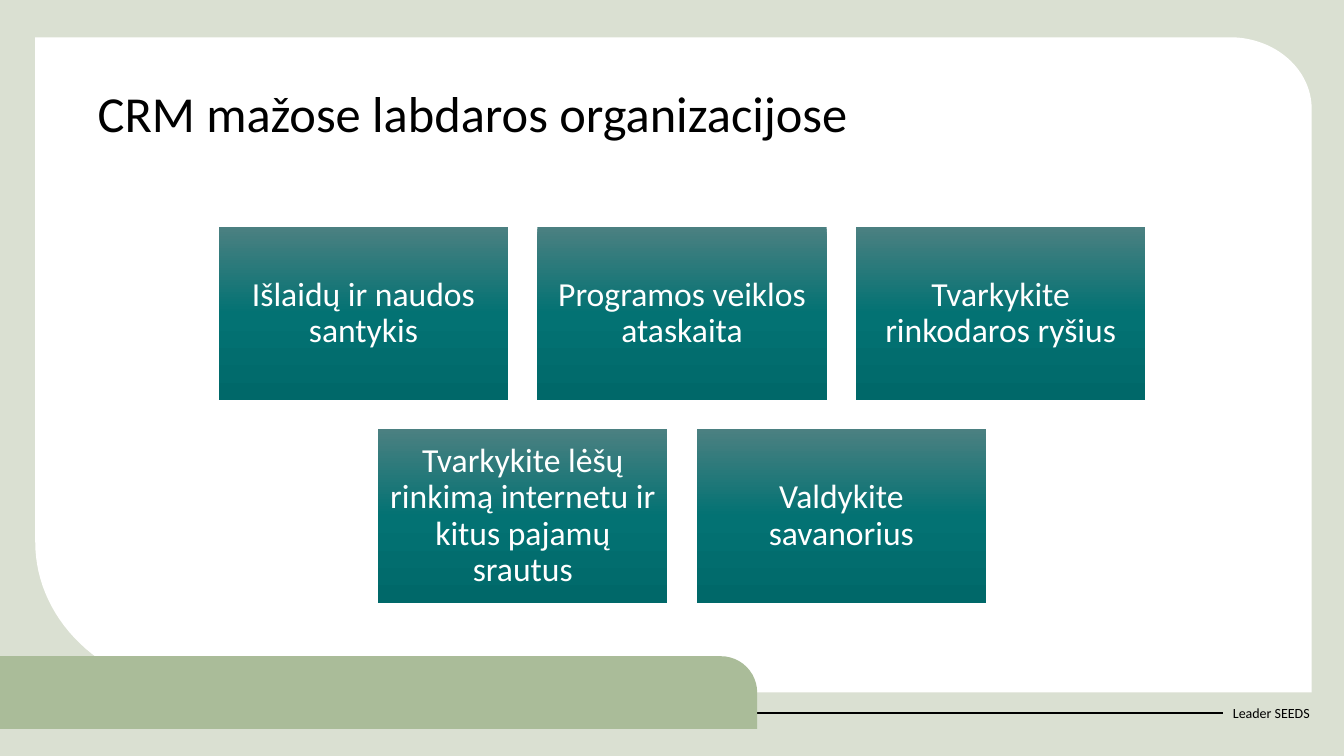
from copy import deepcopy
from math import cos, pi, sin

from pptx import Presentation
from pptx.dml.color import RGBColor
from pptx.enum.shapes import MSO_CONNECTOR, MSO_SHAPE
from pptx.enum.text import MSO_ANCHOR, PP_ALIGN
from pptx.oxml.ns import qn
from pptx.util import Inches, Pt

RECTANGLE = MSO_SHAPE.RECTANGLE
ROUND_ONE_CORNER = MSO_SHAPE.ROUND_1_RECTANGLE
STRAIGHT = MSO_CONNECTOR.STRAIGHT
MIDDLE, TOP = MSO_ANCHOR.MIDDLE, MSO_ANCHOR.TOP
CENTER, LEFT = PP_ALIGN.CENTER, PP_ALIGN.LEFT

FONT = "Calibri"
BLACK = RGBColor(0x00, 0x00, 0x00)
WHITE = RGBColor(0xFF, 0xFF, 0xFF)
PALE_GREEN = RGBColor(0xDA, 0xE0, 0xD2)
SAGE = RGBColor(0xAA, 0xBC, 0x99)
TEAL_STOPS = (
    (0, RGBColor(0x4B, 0x80, 0x81)),
    (0.5, RGBColor(0x03, 0x72, 0x73)),
    (1, RGBColor(0x00, 0x68, 0x69)),
)

SLIDE_WIDTH, SLIDE_HEIGHT = 13.33, 7.5
CARD_WIDTH, CARD_HEIGHT, CARD_GAP = 2.87, 1.72, 0.29
CORNER_STEPS = 32
CARD_ROWS = (
    (
        "Išlaidų ir naudos santykis",
        "Programos veiklos ataskaita",
        "Tvarkykite rinkodaros ryšius",
    ),
    (
        "Tvarkykite lėšų rinkimą internetu ir kitus pajamų srautus",
        "Valdykite savanorius",
    ),
)


def paint(shape, color):
    """Give a shape a plain fill without line or shadow."""
    shape.shadow.inherit = False
    shape.fill.solid()
    shape.fill.fore_color.rgb = color
    shape.line.fill.background()


def paint_gradient(shape, stops):
    """Give a shape a top-to-bottom gradient without line or shadow."""
    shape.shadow.inherit = False
    shape.line.fill.background()
    shape.fill.gradient()
    shape.fill.gradient_angle = 270
    stop_list = shape._element.spPr.find(".//" + qn("a:gsLst"))
    while len(stop_list) < len(stops):
        stop_list.append(deepcopy(stop_list[0]))
    for stop, (position, color) in zip(shape.fill.gradient_stops, stops):
        stop.position = position
        stop.color.rgb = color


def write(shape, text, size, color, align, anchor):
    """Set the single paragraph of a shape."""
    frame = shape.text_frame
    frame.word_wrap = True
    frame.vertical_anchor = anchor
    paragraph = frame.paragraphs[0]
    paragraph.text = text
    paragraph.alignment = align
    paragraph.font.name = FONT
    paragraph.font.size = Pt(size)
    paragraph.font.color.rgb = color
    return paragraph


def corner(center_x, center_y, radius_x, radius_y, start):
    """Return the points of a clockwise quarter ellipse."""
    angles = [start + pi / 2 * step / CORNER_STEPS for step in range(CORNER_STEPS + 1)]
    return [
        (Inches(center_x + radius_x * cos(a)), Inches(center_y + radius_y * sin(a)))
        for a in angles
    ]


def add_panel(slide, left, top, width, height):
    """Draw the white panel with its two rounded corners."""
    right, bottom = left + width, top + height
    small_x, small_y = 0.81, 0.71
    large_x, large_y = 1.7, 1.49
    outline = [
        *corner(right - small_x, top + small_y, small_x, small_y, -pi / 2),
        (Inches(right), Inches(bottom)),
        *corner(left + large_x, bottom - large_y, large_x, large_y, pi / 2),
    ]
    builder = slide.shapes.build_freeform(Inches(left), Inches(top))
    builder.add_line_segments(outline, close=True)
    paint(builder.convert_to_shape(), WHITE)


def add_footer(slide, left, top, width, height):
    """Place the footer label, the rule leading to it and the green band."""
    label_width, label_height = 1.01, 0.4
    label_left, label_top = 12.13, 6.87
    rule_y = Inches(label_top + label_height / 2)
    label = slide.shapes.add_textbox(
        Inches(label_left), Inches(label_top), Inches(label_width), Inches(label_height)
    )
    write(label, "Leader SEEDS", 10, BLACK, LEFT, MIDDLE)

    rule = slide.shapes.add_connector(
        STRAIGHT, Inches(left), rule_y, Inches(label_left), rule_y
    )
    rule.end_connect(label, 1)
    rule.line.color.rgb = BLACK
    rule.line.width = Pt(1.5)
    properties = rule._element.spPr
    properties.append(properties.makeelement(qn("a:effectLst"), {}))

    band = slide.shapes.add_shape(
        ROUND_ONE_CORNER, Inches(left), Inches(top), Inches(width), Inches(height)
    )
    band.adjustments[0] = 0.5
    paint(band, SAGE)


def add_title(slide, left, top, width, height):
    """Place the slide title."""
    title = slide.shapes.add_textbox(
        Inches(left), Inches(top), Inches(width), Inches(height)
    )
    paragraph = write(
        title, "CRM mažose labdaros organizacijose", 36, BLACK, LEFT, TOP
    )
    paragraph.line_spacing = 0.9


def add_cards(slide, left, top, width):
    """Lay out the cards in rows centred in the given width."""
    for row, texts in enumerate(CARD_ROWS):
        row_width = len(texts) * (CARD_WIDTH + CARD_GAP) - CARD_GAP
        row_left = left + (width - row_width) / 2
        for column, text in enumerate(texts):
            card = slide.shapes.add_shape(
                RECTANGLE,
                Inches(row_left + column * (CARD_WIDTH + CARD_GAP)),
                Inches(top + row * (CARD_HEIGHT + CARD_GAP)),
                Inches(CARD_WIDTH),
                Inches(CARD_HEIGHT),
            )
            paint_gradient(card, TEAL_STOPS)
            paragraph = write(card, text, 24, WHITE, CENTER, MIDDLE)
            paragraph.line_spacing = 0.9
            frame = card.text_frame
            frame.margin_left = frame.margin_right = Inches(0.1)
            frame.margin_top = frame.margin_bottom = Inches(0.1)


def main():
    """Build the slide and save it."""
    deck = Presentation()
    deck.slide_width = Inches(SLIDE_WIDTH)
    deck.slide_height = Inches(SLIDE_HEIGHT)
    slide = deck.slides.add_slide(deck.slide_layouts[6])
    backdrop = slide.shapes.add_shape(
        RECTANGLE, 0, 0, deck.slide_width, deck.slide_height
    )
    paint(backdrop, PALE_GREEN)
    add_panel(slide, 0.35, 0.37, 12.66, 6.5)
    add_footer(slide, 0, 6.51, 7.51, 0.72)
    add_title(slide, 0.87, 0.83, 11.59, 0.88)
    add_cards(slide, 2.17, 2.25, 9.19)
    deck.save("out.pptx")


if __name__ == "__main__":
    main()
